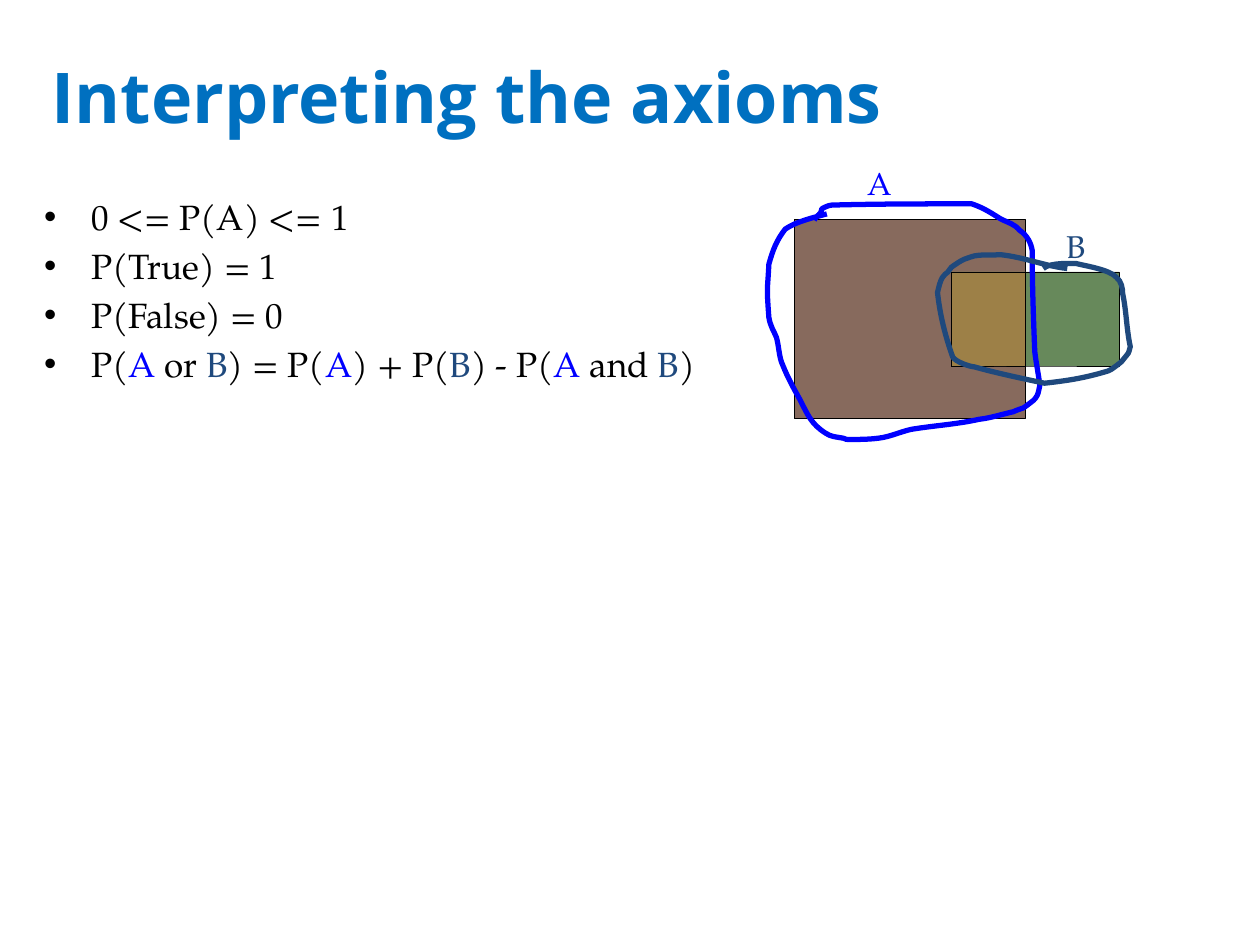
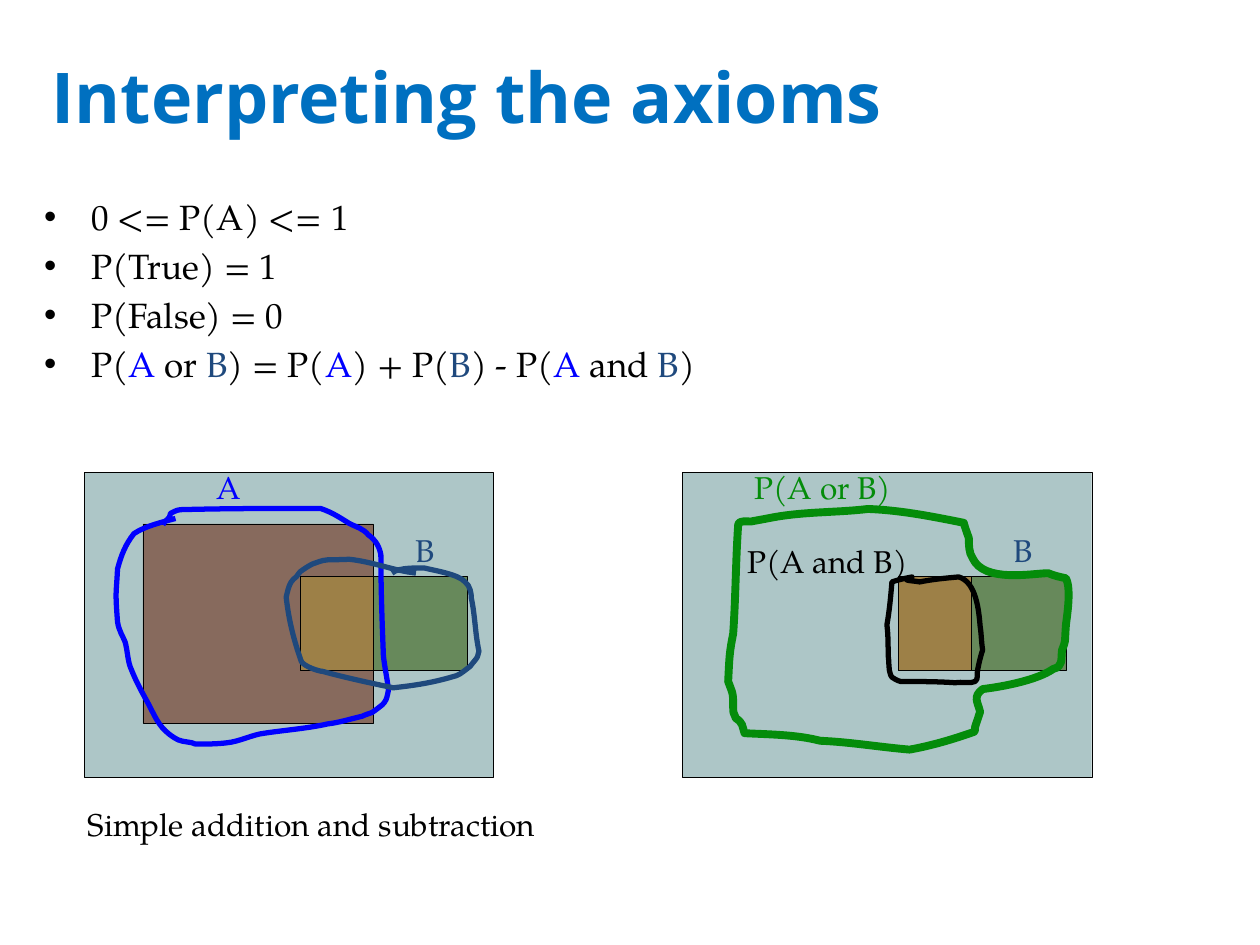
from itertools import groupby

from lxml.etree import SubElement
from pptx import Presentation
from pptx.dml.color import RGBColor
from pptx.enum.shapes import MSO_SHAPE as Preset
from pptx.enum.text import MSO_ANCHOR as Anchor
from pptx.oxml.ns import qn
from pptx.util import Cm, Pt

COLOURS = {
    "title": "0070C0",
    "text": "000000",
    "A": "0000FF",
    "B": "1F497D",
    "union": "048C0A",
    "world": "ADC6C7",
    "A area": "876A5D",
    "B area": "67895B",
    "overlap": "9D8047",
}
TITLE_FONT = "Open Sans"
BODY_FONT = "TeX Gyre Pagella"
OUTLINE_UNITS_PER_CM = 100 / 2.54

AXIOMS = ["0 <= P(A) <= 1", "P(True) = 1", "P(False) = 0"]
SUM_RULE = "P(A or B) = P(A) + P(B) - P(A and B)"

WORLD_SIZE = (8.25, 6.15)
A_AREA = (1.18, 1.04, 4.65, 4.02)
B_AREA = (4.35, 2.1, 3.38, 1.9)
OVERLAP = (4.35, 2.1, 1.48, 1.9)

A_OUTLINE = [
    (48, 8),
    (37, 11), (24, 14), (15, 20), (8, 29), (5, 37), (2, 48),
    (1, 69), (0, 64), (2, 90), (3, 97), (6, 101), (8, 106),
    (10, 113), (10, 122), (13, 128), (17, 138), (22, 147), (27, 156),
    (33, 168), (36, 175), (47, 182), (51, 185), (56, 185), (61, 186),
    (62, 187), (65, 187), (65, 187), (73, 187), (81, 187), (89, 186),
    (98, 185), (106, 181), (115, 179), (133, 176), (151, 175), (169, 171),
    (178, 170), (187, 167), (196, 165), (198, 164), (201, 163), (204, 162),
    (207, 160), (212, 156), (212, 156), (213, 155), (214, 154), (215, 152),
    (216, 150), (217, 144), (217, 144), (216, 135), (214, 126), (213, 117),
    (212, 91), (211, 64), (211, 37), (210, 31), (207, 25), (201, 21),
    (197, 16), (192, 15), (186, 12), (178, 7), (172, 3), (163, 0),
    (126, 0), (89, 0), (52, 1), (49, 1), (44, 4), (44, 4),
    (43, 10), (40, 8), (38, 13),
]
B_OUTLINE = [
    (103, 12),
    (85, 10), (69, 3), (50, 1), (31, 2), (34, 0), (23, 4),
    (19, 5), (11, 11), (11, 11), (10, 12), (9, 14), (8, 15),
    (7, 16), (5, 17), (4, 19), (2, 22), (1, 27), (0, 31),
    (2, 49), (6, 65), (12, 82), (14, 86), (26, 90), (29, 90),
    (47, 95), (66, 99), (85, 103), (103, 101), (116, 99), (133, 94),
    (134, 94), (136, 93), (138, 92), (141, 90), (146, 86), (146, 86),
    (153, 77), (151, 81), (153, 74), (150, 60), (150, 46), (147, 32),
    (147, 28), (146, 22), (142, 19), (137, 13), (118, 10), (110, 8),
    (107, 8), (89, 7), (84, 12),
]
UNION_OUTLINE = [
    (4, 155),
    (4, 152), (4, 148), (3, 145), (2, 142), (0, 137), (0, 137),
    (1, 117), (1, 114), (4, 99), (6, 70), (6, 40), (8, 12),
    (9, 9), (15, 10), (18, 10), (23, 9), (29, 8), (34, 7),
    (60, 2), (86, 3), (111, 0), (137, 1), (162, 6), (187, 11),
    (188, 15), (191, 23), (191, 23), (191, 28), (191, 35), (194, 39),
    (203, 59), (242, 51), (254, 51), (259, 53), (263, 54), (268, 55),
    (273, 64), (268, 90), (268, 93), (267, 108), (268, 104), (265, 112),
    (264, 120), (266, 125), (258, 127), (245, 136), (218, 141), (202, 143),
    (194, 149), (198, 153), (200, 161), (198, 167), (199, 164), (196, 173),
    (196, 174), (196, 177), (195, 177), (178, 183), (161, 188), (144, 191),
    (120, 189), (97, 185), (73, 184), (54, 179), (32, 179), (13, 178),
    (11, 172), (12, 170), (6, 166), (4, 160), (4, 164), (4, 155),
]
OVERLAP_OUTLINE = [
    (20, 0),
    (15, 1), (10, 2), (4, 4), (3, 16), (2, 27), (0, 38),
    (1, 46), (1, 54), (1, 62), (2, 68), (1, 73), (3, 78),
    (3, 80), (10, 83), (11, 83), (25, 83), (40, 83), (54, 84),
    (60, 83), (66, 85), (70, 83), (73, 81), (71, 77), (72, 74),
    (73, 69), (74, 64), (76, 58), (75, 52), (75, 45), (74, 39),
    (73, 27), (71, 4), (57, 0), (46, 1), (36, 2), (26, 4),
    (22, 3), (8, 3), (20, 0),
]


def colour(name):
    return RGBColor.from_string(COLOURS[name])


def bend_segments(loop):
    track = loop._element.find(".//" + qn("a:path"))
    segments = track.findall(qn("a:lnTo"))
    for start in range(0, len(segments), 3):
        curve = track.makeelement(qn("a:cubicBezTo"))
        segments[start].addprevious(curve)
        for segment in segments[start:start + 3]:
            curve.append(segment[0])
            track.remove(segment)


class AxiomDeck:
    def __init__(self):
        self.deck = Presentation()
        self.deck.slide_width = Cm(25.4)
        self.deck.slide_height = Cm(19.05)
        self.slide = None
        self.origin = (0, 0)

    def new_slide(self):
        self.slide = self.deck.slides.add_slide(self.deck.slide_layouts[6])
        self.origin = (0, 0)

    def at(self, left, top):
        return Cm(self.origin[0] + left), Cm(self.origin[1] + top)

    def style(self, paragraph, size, font, tint=None, bold=None):
        paragraph.font.size = Pt(size)
        paragraph.font.name = font
        paragraph.font.bold = bold
        if tint:
            paragraph.font.color.rgb = colour(tint)

    def text_frame(self, left, top, width, height, wrap=True):
        box = self.slide.shapes.add_textbox(*self.at(left, top), Cm(width), Cm(height))
        box.text_frame.word_wrap = wrap
        return box.text_frame

    def title(self, text):
        frame = self.text_frame(0.79, 0.81, 24.03, 2.24)
        frame.vertical_anchor = Anchor.MIDDLE
        heading = frame.paragraphs[0]
        heading.text = text
        self.style(heading, 40, TITLE_FONT, "title", True)

    def bullet(self, paragraph):
        paragraph.space_before = Pt(4)
        properties = paragraph._p.get_or_add_pPr()
        properties.set("marL", str(Cm(0.95)))
        properties.set("indent", str(-Cm(0.95)))
        SubElement(properties, qn("a:buFont")).set("typeface", "Arial")
        SubElement(properties, qn("a:buChar")).set("char", "•")

    def axioms(self):
        frame = self.text_frame(0.64, 3.81, 13.77, 4.45)
        for number, axiom in enumerate(AXIOMS + [SUM_RULE]):
            line = frame.add_paragraph() if number else frame.paragraphs[0]
            self.bullet(line)
            if axiom != SUM_RULE:
                line.text = axiom
                self.style(line, 20, BODY_FONT, "text")
                continue
            self.style(line, 20, BODY_FONT)
            for tint, letters in groupby(axiom, lambda c: c if c in "AB" else "text"):
                piece = line.add_run()
                piece.text = "".join(letters)
                piece.font.color.rgb = colour(tint)

    def label(self, text, left, top, width, tint):
        line = self.text_frame(left, top, width, 1.09, wrap=False).paragraphs[0]
        line.text = text
        self.style(line, 18, BODY_FONT, tint)

    def area(self, left, top, width, height, tint):
        area = self.slide.shapes.add_shape(
            Preset.RECTANGLE, *self.at(left, top), Cm(width), Cm(height))
        area.shadow.inherit = False
        area.fill.solid()
        area.fill.fore_color.rgb = colour(tint)
        area.line.color.rgb = colour("text")
        area.line.width = Pt(0.25)

    def outline(self, knots, left, top, tint, weight=3):
        builder = self.slide.shapes.build_freeform(
            *knots[0], scale=Cm(1) / OUTLINE_UNITS_PER_CM)
        builder.add_line_segments(knots[1:], close=knots[0] == knots[-1])
        loop = builder.convert_to_shape(*self.at(left, top))
        bend_segments(loop)
        loop.shadow.inherit = False
        loop.fill.background()
        loop.line.color.rgb = colour(tint)
        loop.line.width = Pt(weight)

    def world(self):
        self.area(0, 0, *WORLD_SIZE, "world")

    def b_areas(self):
        self.area(*B_AREA, "B area")
        self.area(*OVERLAP, "overlap")

    def b_label(self):
        self.label("B", 6.43, 1.07, 0.91, "B")

    def events(self):
        self.area(*A_AREA, "A area")
        self.b_areas()
        self.outline(A_OUTLINE, 0.62, 0.73, "A")
        self.label("A", 2.41, -0.2, 0.94, "A")
        self.outline(B_OUTLINE, 4.07, 1.73, "B")
        self.b_label()

    def union(self):
        self.b_areas()
        self.label("P(A or B)", 1.2, -0.2, 3.35, "union")
        self.b_label()
        self.outline(UNION_OUTLINE, 0.92, 0.74, "union", 4.5)
        self.outline(OVERLAP_OUTLINE, 4.12, 2.11, "text")
        self.label("P(A and B)", 1.05, 1.28, 3.86, "text")

    def axiom_slide(self):
        self.new_slide()
        self.title("Interpreting the axioms")
        self.axioms()


def main():
    show = AxiomDeck()

    show.axiom_slide()
    show.origin = (14.83, 3.38)
    show.events()

    show.axiom_slide()
    show.origin = (1.7, 9.52)
    show.world()
    show.events()
    show.origin = (13.76, 9.52)
    show.world()
    show.union()
    show.origin = (0, 0)
    show.label("Simple addition and subtraction", 1.52, 16.1, 10.34, "text")

    show.deck.save("out.pptx")


if __name__ == "__main__":
    main()
